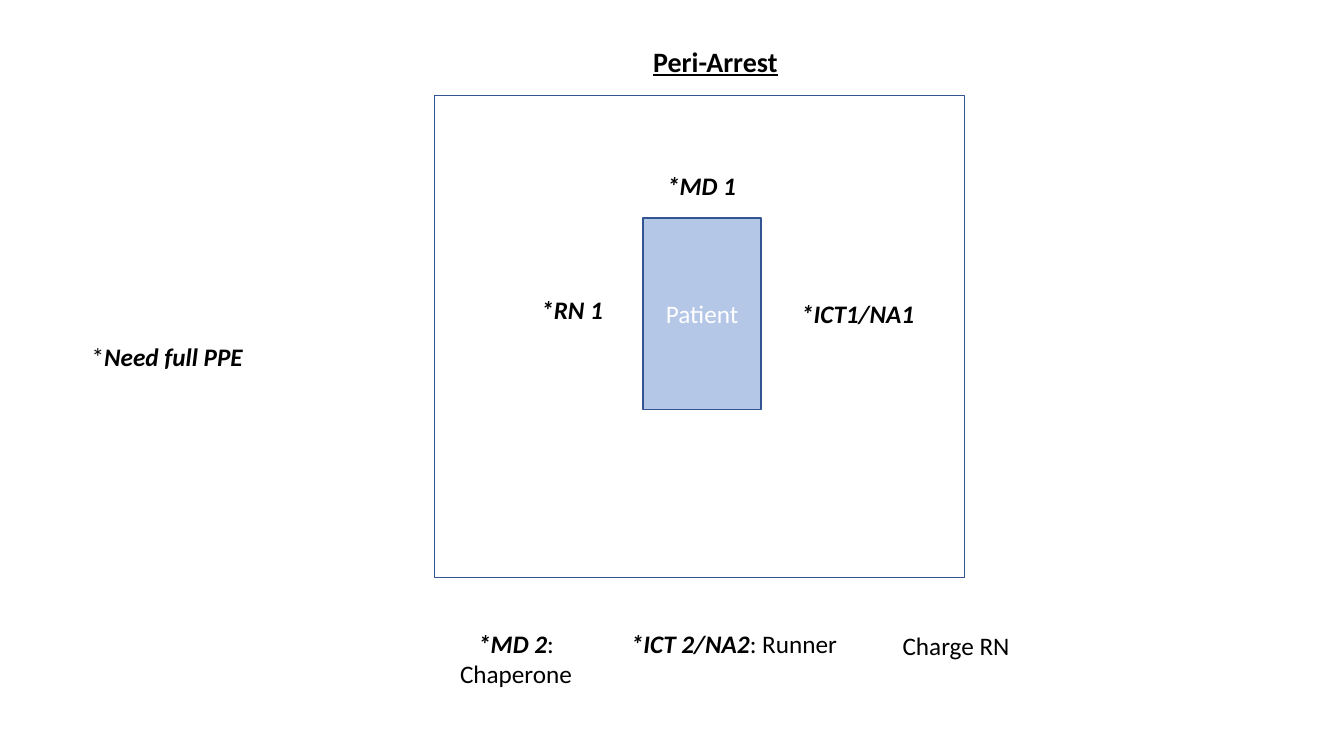
import pptx
import pptx.dml.color
import pptx.enum.shapes
import pptx.enum.text
import pptx.util

Cm = pptx.util.Cm
ALIGN = pptx.enum.text.PP_ALIGN
COLOURS = {
    "white": "FFFFFF",
    "black": "000000",
    "outline": "325491",
    "patient": "B4C7E7",
}


class SlideBuilder:
    font_name = "Calibri"
    line_width = 1

    def __init__(self, page):
        self.page = page

    def colour(self, name):
        return pptx.dml.color.RGBColor.from_string(COLOURS[name])

    def add_spans(self, para, spans, colour="black", size=18):
        for text, style in spans:
            span = para.add_run()
            span.text = text
            font = span.font
            font.name = self.font_name
            font.size = pptx.util.Pt(size)
            font.color.rgb = self.colour(colour)
            font.bold = "b" in style
            font.italic = "i" in style
            font.underline = "u" in style

    def rectangle(self, left, top, width, height, fill, spans=()):
        box = self.page.shapes.add_shape(
            pptx.enum.shapes.MSO_SHAPE.RECTANGLE,
            Cm(left), Cm(top), Cm(width), Cm(height))
        box.shadow.inherit = False
        box.fill.solid()
        box.fill.fore_color.rgb = self.colour(fill)
        box.line.color.rgb = self.colour("outline")
        box.line.width = pptx.util.Pt(self.line_width)
        if spans:
            frame = box.text_frame
            frame.vertical_anchor = pptx.enum.text.MSO_ANCHOR.MIDDLE
            para = frame.paragraphs[0]
            para.alignment = ALIGN.CENTER
            self.add_spans(para, spans, "white")

    def label(self, left, top, width, spans, align=ALIGN.LEFT, size=18, height=1.02):
        box = self.page.shapes.add_textbox(Cm(left), Cm(top), Cm(width), Cm(height))
        frame = box.text_frame
        frame.word_wrap = True
        frame.auto_size = pptx.enum.text.MSO_AUTO_SIZE.SHAPE_TO_FIT_TEXT
        para = frame.paragraphs[0]
        para.alignment = align
        self.add_spans(para, spans, size=size)


def main():
    deck = pptx.Presentation()
    deck.slide_width = Cm(33.87)
    deck.slide_height = Cm(19.05)
    builder = SlideBuilder(deck.slides.add_slide(deck.slide_layouts[6]))

    builder.rectangle(10.95, 2.41, 13.36, 12.14, "white")
    builder.rectangle(16.21, 5.49, 2.97, 4.83, "patient", [("Patient", "")])

    builder.label(11.25, 15.7, 3.51, [("*MD 2", "bi"), (": Chaperone", "")],
                  ALIGN.CENTER, height=1.8)
    builder.label(21.87, 15.75, 4.45, [("Charge RN", "")], ALIGN.CENTER)
    builder.label(15.65, 15.7, 7.14, [("*ICT 2/NA2", "bi"), (": Runner", "")])
    builder.label(13.84, 0.99, 8.38, [("Peri-Arrest", "bu")], ALIGN.CENTER,
                  size=20, height=1.12)
    builder.label(2.06, 8.48, 5.72, [("*", ""), ("Need full PPE", "bi")])

    bedside_team = [
        ("*RN 1", 13.39, 7.29, 2.24),
        ("*ICT1/NA1", 19.94, 7.39, 3.86),
        ("*MD 1", 16.56, 4.17, 2.97),
    ]
    for role, left, top, width in bedside_team:
        builder.label(left, top, width, [(role, "bi")])

    deck.save("out.pptx")


if __name__ == "__main__":
    main()
